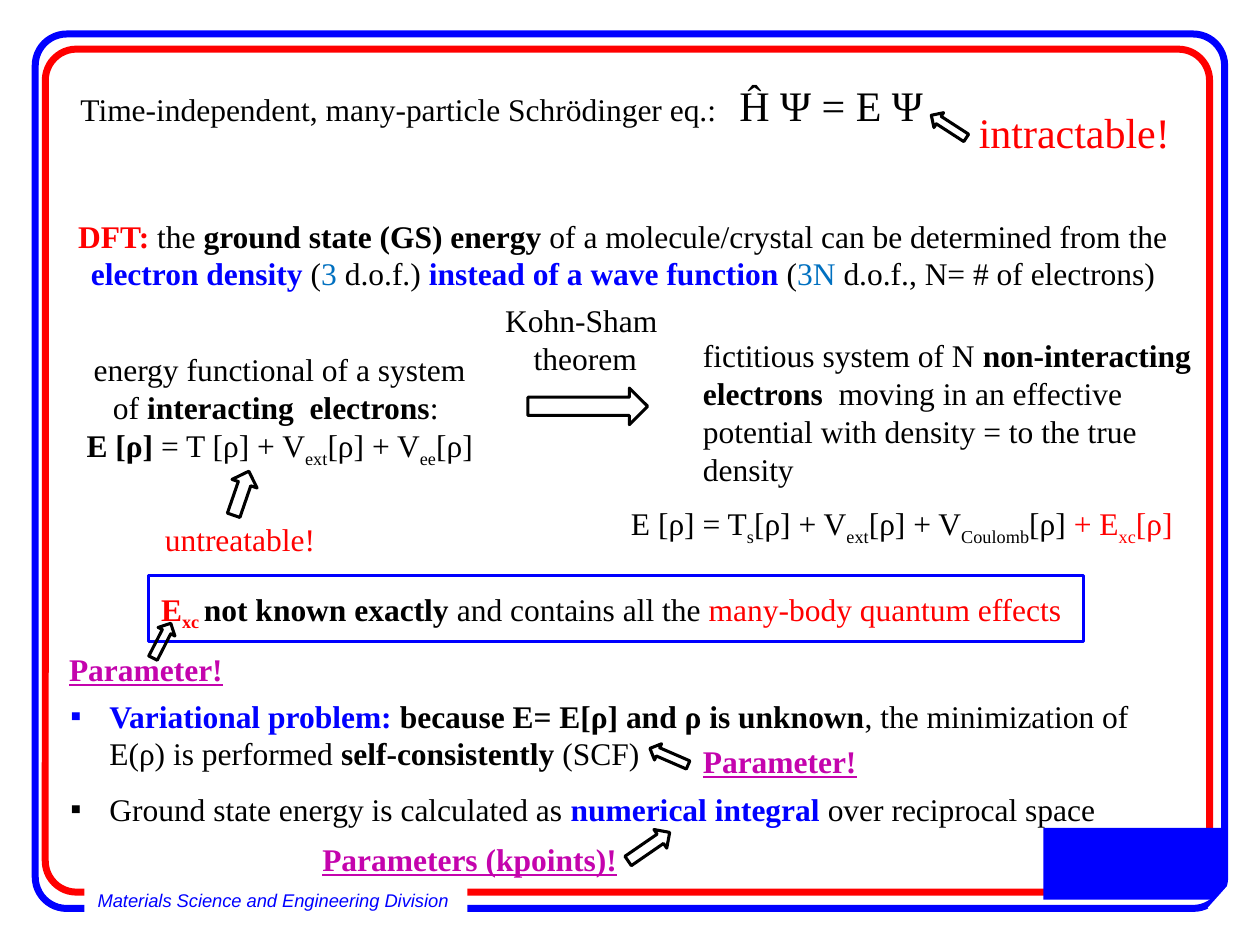
from dataclasses import dataclass

from lxml import etree
from pptx import Presentation
from pptx.dml.color import RGBColor
from pptx.enum import shapes, text
from pptx.oxml import ns
from pptx.util import Inches, Pt

COLORS = {"black": "000000", "white": "FFFFFF", "red": "FF0000",
          "blue": "0000FF", "sky": "0070C0", "magenta": "C404AD"}
SERIF = "Times New Roman"
SHAPE = shapes.MSO_SHAPE
CENTER = text.PP_ALIGN.CENTER


@dataclass(frozen=True)
class Run:
    words: str
    color: str = "black"
    bold: bool = False
    subscript: bool = False
    underline: bool = False
    italic: bool = False
    size: float = 18
    font: str = SERIF


@dataclass(frozen=True)
class TextBlock:
    box: tuple[float, float, float, float]
    paragraphs: list[list[Run]]
    align: text.PP_ALIGN = text.PP_ALIGN.LEFT
    wrap: bool = True
    bullet: bool = False
    tab: float = 0


@dataclass(frozen=True)
class Outline:
    box: tuple[float, float, float, float]
    preset: shapes.MSO_SHAPE = SHAPE.UP_ARROW
    rotation: float = 0
    color: str = "black"
    width: float = 1.75
    corner: float = 0


def sub(words: str, **style) -> Run:
    return Run(words, subscript=True, **style)


def bold(words: str, color: str = "black") -> Run:
    return Run(words, color, bold=True)


def parameter(words: str, *box: float) -> TextBlock:
    return TextBlock(box, [[Run(words, "magenta", bold=True, underline=True)]], wrap=False)


def rgb(name: str) -> RGBColor:
    return RGBColor.from_string(COLORS[name])


def add_run(paragraph, item: Run) -> None:
    run = paragraph.add_run()
    run.text = item.words
    font = run.font
    font.name, font.size = item.font, Pt(item.size)
    font.bold, font.italic, font.underline = item.bold, item.italic, item.underline
    font.color.rgb = rgb(item.color)
    if item.subscript:
        run._r.get_or_add_rPr().set("baseline", "-25000")


def add_bullet(paragraph) -> None:
    properties = paragraph._p.get_or_add_pPr()
    properties.set("marL", str(Inches(0.31)))
    properties.set("indent", str(-Inches(0.31)))
    etree.SubElement(properties, ns.qn("a:buFont")).set("typeface", "Arial")
    etree.SubElement(properties, ns.qn("a:buChar")).set("char", "▪")


def add_tab_stop(paragraph, position: float) -> None:
    stops = etree.SubElement(paragraph._p.get_or_add_pPr(), ns.qn("a:tabLst"))
    stop = etree.SubElement(stops, ns.qn("a:tab"))
    stop.set("pos", str(Inches(position)))
    stop.set("algn", "l")


def add_text(slide, block: TextBlock) -> None:
    frame = slide.shapes.add_textbox(*map(Inches, block.box)).text_frame
    frame.word_wrap = block.wrap
    frame.auto_size = text.MSO_AUTO_SIZE.SHAPE_TO_FIT_TEXT
    for index, runs in enumerate(block.paragraphs):
        paragraph = frame.add_paragraph() if index else frame.paragraphs[0]
        paragraph.alignment = block.align
        if block.bullet:
            add_bullet(paragraph)
        if block.tab:
            add_tab_stop(paragraph, block.tab)
        for item in runs:
            add_run(paragraph, item)


def add_outline(slide, outline: Outline) -> None:
    shape = slide.shapes.add_shape(outline.preset, *map(Inches, outline.box))
    shape.shadow.inherit = False
    shape.fill.background()
    shape.line.color.rgb = rgb(outline.color)
    shape.line.width = Pt(outline.width)
    shape.rotation = outline.rotation
    if outline.corner:
        shape.adjustments[0] = outline.corner


def add_block(slide, color: str, *box: float):
    """Add a filled rectangle without a border."""
    shape = slide.shapes.add_shape(SHAPE.RECTANGLE, *map(Inches, box))
    shape.shadow.inherit = False
    shape.fill.solid()
    shape.fill.fore_color.rgb = rgb(color)
    shape.line.fill.background()
    return shape


def add_frame(slide) -> None:
    """Draw the double border, the division label and the corner block."""
    for color, corner, box in (("red", 0.037, (0.36, 0.39, 9.24, 6.69)),
                               ("blue", 0.036, (0.28, 0.27, 9.44, 6.94))):
        add_outline(slide, Outline(box, SHAPE.ROUNDED_RECTANGLE, 0, color, 4, corner))
    label = add_block(slide, "white", 0.67, 6.9, 3.04, 0.48).text_frame
    label.word_wrap = False
    label.vertical_anchor = text.MSO_ANCHOR.MIDDLE
    label.paragraphs[0].alignment = CENTER
    add_run(label.paragraphs[0], Run("Materials Science and Engineering Division ", "blue",
                                     italic=True, size=10.5, font="Arial"))
    add_block(slide, "blue", 8.28, 6.57, 1.41, 0.57)
    cut = slide.shapes.add_connector(shapes.MSO_CONNECTOR.STRAIGHT,
                                     *map(Inches, (9.77, 7.03, 9.6, 7.22)))
    cut.line.color.rgb = rgb("white")
    cut.line.width = Pt(3)
    etree.SubElement(cut._element.spPr, ns.qn("a:effectLst"))


CONTENT = [
    TextBlock((0.41, 1.67, 9.07, 0.71), [[
        bold("DFT:", "red"), Run(" the "), bold("ground state (GS) energy "),
        Run("of a molecule/crystal can be determined from the "),
        bold("electron density ", "blue"), Run("("), Run("3 ", "sky"), Run("d.o.f.) "),
        bold("instead of a wave function ", "blue"), Run("("), Run("3N ", "sky"),
        Run("d.o.f., N= # of electrons)")]], CENTER),
    TextBlock((1.18, 4.63, 7.88, 0.4), [[
        bold("E", "red"), sub("xc ", color="red", bold=True), bold("not known exactly "),
        Run("and contains all the "), Run("many-body quantum effects", "red")]]),
    Outline((1.18, 4.57, 7.42, 0.52), SHAPE.RECTANGLE, color="blue"),
    TextBlock((0.54, 0.58, 9.16, 0.81), [[
        Run("Time-independent, many-particle Schrödinger eq.:\t"),
        Run("Ĥ Ψ = E Ψ", size=24)]], tab=5.23),
    Outline((7.46, 0.84, 0.14, 0.33), rotation=302.9),
    TextBlock((7.67, 0.8, 1.73, 0.5), [[Run("intractable!", "red", size=24)]], wrap=False),
    TextBlock((0.54, 2.73, 3.36, 1.01), [
        [Run("energy functional of a system of "), bold("interacting  electrons"), Run(": ")],
        [bold("E [ρ]"), Run(" = T [ρ] + V"), sub("ext"), Run("[ρ] + V"), sub("ee"),
         Run("[ρ]")]], CENTER),
    TextBlock((5.48, 2.62, 4.42, 1.31), [[
        Run("fictitious system of N "), bold("non-interacting electrons  "),
        Run("moving in an effective potential with density = to the true density")]]),
    Outline((4.19, 3.08, 0.95, 0.29), SHAPE.RIGHT_ARROW),
    TextBlock((3.9, 2.34, 1.49, 0.71), [[Run("Kohn-Sham ")], [Run("theorem")]],
              CENTER, wrap=False),
    TextBlock((4.91, 3.95, 4.7, 0.4), [[
        Run("E [ρ] = T"), sub("s"), Run("[ρ] + V"), sub("ext"), Run("[ρ] + V"),
        sub("Coulomb"), Run("[ρ] "), Run("+ E", "red"), sub("xc", color="red"),
        Run("[ρ]", "red")]], wrap=False),
    Outline((1.81, 3.73, 0.21, 0.37), rotation=19),
    TextBlock((1.21, 4.08, 1.41, 0.4), [[Run("untreatable!", "red")]], wrap=False),
    TextBlock((0.46, 5.48, 8.74, 0.71), [[
        bold("Variational problem: ", "blue"), bold("because E= E[ρ] and ρ is unknown"),
        Run(", the minimization of E(ρ) is performed "), bold("self-consistently"),
        Run(" (SCF)")]], bullet=True),
    TextBlock((0.46, 6.22, 8.97, 0.4), [[
        Run("Ground state energy is calculated as "), bold("numerical integral ", "blue"),
        Run("over reciprocal space")]], bullet=True),
    Outline((5.24, 5.84, 0.14, 0.33), rotation=293.5),
    parameter("Parameter!", 5.48, 5.84, 1.44, 0.4),
    parameter("Parameters (kpoints)!", 2.46, 6.62, 2.57, 0.4),
    Outline((5.06, 6.52, 0.18, 0.4), rotation=55.5),
    parameter("Parameter!", 0.45, 5.11, 1.44, 0.4),
    Outline((1.21, 4.93, 0.15, 0.31), rotation=27),
]


def main() -> None:
    presentation = Presentation()
    presentation.slide_width, presentation.slide_height = Inches(10), Inches(7.5)
    slide = presentation.slides.add_slide(presentation.slide_layouts[6])
    add_frame(slide)
    for item in CONTENT:
        if isinstance(item, TextBlock):
            add_text(slide, item)
        else:
            add_outline(slide, item)
    presentation.save("out.pptx")


if __name__ == "__main__":
    main()
